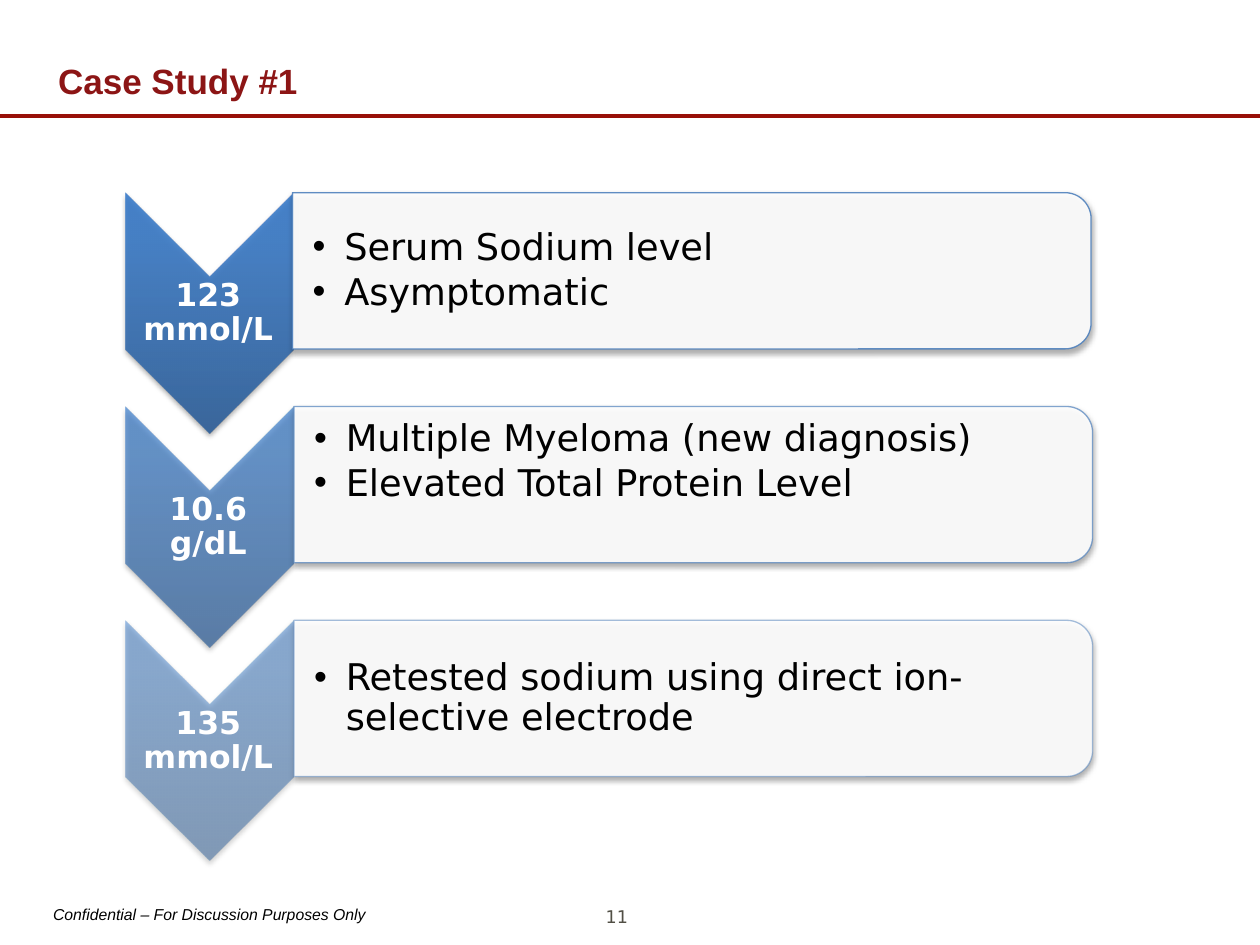
from lxml.etree import SubElement
from pptx import Presentation
from pptx.dml.color import RGBColor
from pptx.enum.shapes import MSO_CONNECTOR, MSO_SHAPE
from pptx.enum.text import MSO_ANCHOR, MSO_AUTO_SIZE, PP_ALIGN
from pptx.oxml import parse_xml
from pptx.oxml.ns import nsdecls, qn
from pptx.util import Cm, Pt

CRIMSON = RGBColor(0x8C, 0x15, 0x15)
RULE_RED = RGBColor(0x98, 0x0F, 0x08)
BLACK = RGBColor(0, 0, 0)
WHITE = RGBColor(0xFF, 0xFF, 0xFF)
GREY = RGBColor(0x51, 0x4F, 0x45)
BLUE = RGBColor(0x4F, 0x81, 0xBD)
DEEP_BLUE = RGBColor(0x2F, 0x5F, 0x99)
MID_BLUE = RGBColor(0x3D, 0x7C, 0xC7)
BRIGHT_BLUE = RGBColor(0x3A, 0x7C, 0xCB)

STEP_PITCH = 4.31
STEPS = [
    ("123 mmol/L", ["Serum Sodium level", "Asymptomatic"], 90, -0.03, 0.03),
    ("10.6 g/dL", ["Multiple Myeloma (new diagnosis)", "Elevated Total Protein Level"], 70, 0, 0.94),
    ("135 mmol/L", ["Retested sodium using direct ion-selective electrode"], 50, 0, 0.03),
]


def write_text(frame, lines, size, color, font="DejaVu Sans", bold=False, italic=False,
               align=PP_ALIGN.LEFT, anchor=MSO_ANCHOR.TOP, spacing=1.0, after=0,
               insets=(0, 0, 0, 0), wrap=True, bullets=False):
    frame.auto_size = MSO_AUTO_SIZE.NONE
    frame.word_wrap = wrap
    frame.vertical_anchor = anchor
    frame.margin_left, frame.margin_top, frame.margin_right, frame.margin_bottom = map(Cm, insets)
    for index, line in enumerate(lines):
        para = frame.add_paragraph() if index else frame.paragraphs[0]
        para.alignment = align
        para.line_spacing = spacing
        para.space_before = Pt(0)
        para.space_after = Pt(after)
        span = para.add_run()
        span.text = line
        span.font.name = font
        span.font.size = Pt(size)
        span.font.bold = bold
        span.font.italic = italic
        span.font.color.rgb = color
        if bullets:
            para.level = 1
            properties = para._p.get_or_add_pPr()
            properties.set("marL", str(Cm(0.64)))
            properties.set("indent", str(-Cm(0.64)))
            SubElement(properties, qn("a:buFont"), typeface="Arial")
            SubElement(properties, qn("a:buChar"), char="•")


def set_alpha(fill_element, percent):
    for color in fill_element.iter(qn("a:srgbClr")):
        SubElement(color, qn("a:alpha"), val=str(percent * 1000))


class SlideBuilder:
    def __init__(self, deck):
        self.page = deck.slides.add_slide(deck.slide_layouts[4])
        self.shapes = self.page.shapes
        self.bodies = [holder for holder in self.page.placeholders
                       if holder.placeholder_format.idx]

    def place(self, shape, left, top, width, height):
        shape.left, shape.top, shape.width, shape.height = map(Cm, (left, top, width, height))

    def title(self, text):
        holder = self.shapes.title
        self.place(holder, 1.17, 0.58, 23.27, 1.47)
        write_text(holder.text_frame, [text], 20, CRIMSON, font="Arial", bold=True,
                   anchor=MSO_ANCHOR.BOTTOM, spacing=1.05)

    def rule(self, top):
        line = self.shapes.add_connector(MSO_CONNECTOR.STRAIGHT, 0, Cm(top), Cm(25.4), Cm(top))
        line.line.color.rgb = RULE_RED
        line.line.width = Pt(2.25)
        SubElement(line._element.spPr, qn("a:effectLst"))

    def text(self, text, left, top, width, height, size, color, **style):
        box = self.shapes.add_textbox(Cm(left), Cm(top), Cm(width), Cm(height))
        write_text(box.text_frame, [text], size, color, **style)

    def turned_shape(self, kind, left, top, width, height):
        shape = self.shapes.add_shape(kind, Cm(left), Cm(top), Cm(width), Cm(height))
        shape.rotation = 90
        return shape

    def add_shadow(self, shape):
        shape._element.spPr.append(parse_xml(
            f'<a:effectLst {nsdecls("a")}><a:outerShdw blurRad="{Pt(3.1)}" dist="{Pt(1.8)}" '
            'dir="5400000" rotWithShape="0"><a:srgbClr val="000000"><a:alpha val="35000"/>'
            '</a:srgbClr></a:outerShdw></a:effectLst>'))

    def chevron(self, top, opacity):
        shape = self.turned_shape(MSO_SHAPE.CHEVRON, 1.8, top, 4.85, 3.38)
        shape.line.fill.background()
        stops = "".join(f'<a:gs pos="{position}000"><a:srgbClr val="{color}"/></a:gs>'
                        for position, color in ((0, DEEP_BLUE), (80, MID_BLUE), (100, BRIGHT_BLUE)))
        gradient = parse_xml(f'<a:gradFill {nsdecls("a")} rotWithShape="0"><a:gsLst>{stops}</a:gsLst>'
                             '<a:lin ang="16200000" scaled="0"/></a:gradFill>')
        set_alpha(gradient, opacity)
        shape._element.spPr.find(qn("a:ln")).addprevious(gradient)
        self.add_shadow(shape)

    def panel(self, left, top, opacity):
        shape = self.turned_shape(MSO_SHAPE.ROUND_2_SAME_RECTANGLE, left, top, 3.15, 16.1)
        shape.fill.solid()
        shape.fill.fore_color.rgb = WHITE
        shape.line.color.rgb = BLUE
        shape.line.width = Pt(0.75)
        properties = shape._element.spPr
        set_alpha(properties.find(qn("a:solidFill")), 90)
        set_alpha(properties.find(qn("a:ln")), opacity)
        self.add_shadow(shape)

    def bullet_list(self, lines, left, top, bottom_inset):
        body = self.bodies.pop(0)
        self.shapes._spTree.append(body._element)
        self.place(body, left, top, 15.95, 2.84)
        write_text(body.text_frame, lines, 21, BLACK, anchor=MSO_ANCHOR.MIDDLE, spacing=0.9,
                   after=3, insets=(0.41, 0.03, 0.03, bottom_inset), bullets=True)

    def step(self, offset, label, lines, opacity, shift, bottom_inset):
        self.chevron(4.62 + offset, opacity)
        self.text(label, 2.51, 5.59 + offset, 3.38, 1.45, 18, WHITE, bold=True,
                  align=PP_ALIGN.CENTER, anchor=MSO_ANCHOR.MIDDLE, spacing=0.9,
                  insets=(0.15, 0.03, 0.15, 0.03))
        self.panel(12.4 + shift, -2.59 + offset, opacity)
        self.bullet_list(lines, 5.92 + shift, 4.04 + offset, bottom_inset)

    def remove_unused(self):
        for body in self.bodies:
            body._element.getparent().remove(body._element)


def main():
    deck = Presentation()
    deck.slide_width, deck.slide_height = Cm(25.4), Cm(19.05)
    builder = SlideBuilder(deck)
    builder.rule(2.34)
    builder.title("Case Study #1")
    builder.text("Confidential – For Discussion Purposes Only", 1.07, 18.24, 6.35, 0.38, 9, BLACK,
                 font="Arial", italic=True, wrap=False)
    builder.text("11", 11, 18.14, 2.87, 0.48, 10, GREY, align=PP_ALIGN.CENTER,
                 insets=(0.25, 0.13, 0.25, 0.13))
    for index, step in enumerate(STEPS):
        builder.step(index * STEP_PITCH, *step)
    builder.remove_unused()
    deck.save("out.pptx")


if __name__ == "__main__":
    main()
